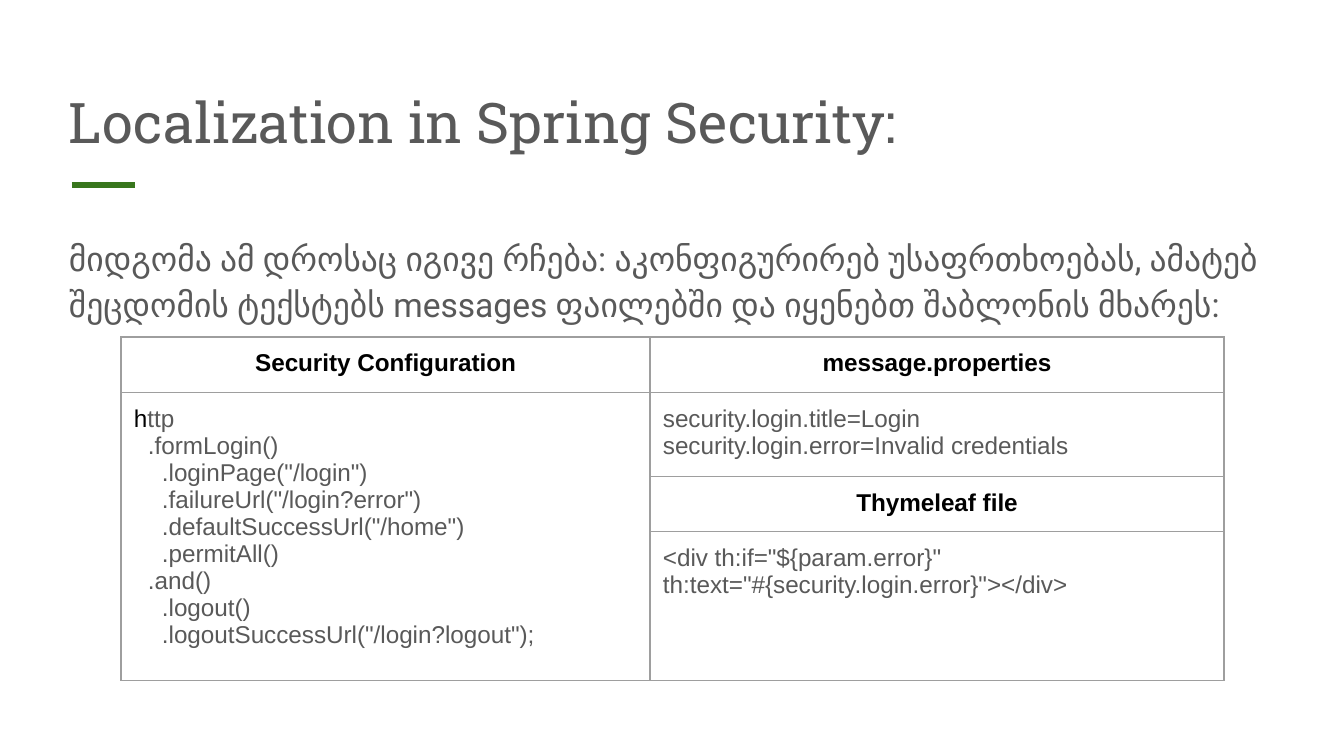
from dataclasses import dataclass

from lxml import etree
from pptx import Presentation
from pptx import util as u
from pptx.dml.color import RGBColor
from pptx.enum import shapes, text
from pptx.oxml import ns

GREY, BLACK, GREEN, RULE = "595959", "000000", "38761D", "9E9E9E"
PAD = 13
STEP = 7  # width of one code indent space


def px(n: int) -> int:
    return round(n * 914400 / 134.4)


def rgb(code: str) -> RGBColor:
    return RGBColor.from_string(code)


@dataclass
class Run:
    text: str
    size: int = 13
    font: str = "Arial"
    color: str = GREY
    bold: bool = False


@dataclass
class Line:
    runs: list[Run]
    indent: int = 0
    center: bool = False


@dataclass
class Block:
    row: int
    col: int
    lines: list[Line]


@dataclass
class Box:
    top: int
    height: int
    run: Run
    anchor: text.MSO_ANCHOR
    spacing: float = 1.0
    after: int = 0


def head(label: str) -> list[Line]:
    return [Line([Run(label, color=BLACK, bold=True)], center=True)]


def code(*rows: str) -> list[Line]:
    """Turn the leading spaces of each row into an indent."""
    return [Line([Run(r.lstrip())], len(r) - len(r.lstrip())) for r in rows]


def add_run(para, run: Run) -> None:
    part = para.add_run()
    part.text = run.text
    part.font.size = u.Pt(run.size)
    part.font.name = run.font
    part.font.bold = run.bold
    part.font.color.rgb = rgb(run.color)


def pad(item) -> None:
    item.margin_left = item.margin_right = px(PAD)
    item.margin_top = item.margin_bottom = px(PAD)


def add_box(slide, box: Box) -> None:
    shape = slide.shapes.add_textbox(px(56), px(box.top), px(1230), px(box.height))
    frame = shape.text_frame
    frame.word_wrap = True
    frame.vertical_anchor = box.anchor
    pad(frame)
    para = frame.paragraphs[0]
    para.line_spacing = box.spacing
    para.space_after = u.Pt(box.after)
    add_run(para, box.run)


def add_bar(slide) -> None:
    bar = slide.shapes.add_connector(
        shapes.MSO_CONNECTOR.STRAIGHT, px(72), px(185), px(135), px(185))
    bar.line.color.rgb = rgb(GREEN)
    bar.line.width = u.Pt(3)
    etree.SubElement(bar._element.spPr, ns.qn("a:effectLst"))


def edge(cell) -> None:
    """Draw a thin border on all four sides of a cell."""
    props = cell._tc.get_or_add_tcPr()
    for side in ("lnL", "lnR", "lnT", "lnB"):
        line = etree.SubElement(props, ns.qn(f"a:{side}"), w=str(u.Pt(0.75)))
        fill = etree.SubElement(line, ns.qn("a:solidFill"))
        etree.SubElement(fill, ns.qn("a:srgbClr"), val=RULE)


def fill_cell(cell, lines: list[Line]) -> None:
    frame = cell.text_frame
    for i, line in enumerate(lines):
        para = frame.add_paragraph() if i else frame.paragraphs[0]
        if line.center:
            para.alignment = text.PP_ALIGN.CENTER
        if line.indent:
            para._p.get_or_add_pPr().set("marL", str(px(line.indent * STEP)))
        for run in line.runs:
            add_run(para, run)


def add_grid(slide, cols: list[int], rows: list[int], blocks: list[Block]) -> None:
    frame = slide.shapes.add_table(
        len(rows), len(cols), px(121), px(337), px(sum(cols)), px(sum(rows)))
    grid = frame.table
    grid.first_row = grid.horz_banding = False
    for col, width in zip(grid.columns, cols):
        col.width = px(width)
    for row, height in zip(grid.rows, rows):
        row.height = px(height)
    for cell in grid.iter_cells():
        pad(cell)
        edge(cell)
        cell.fill.background()
    grid.cell(1, 0).merge(grid.cell(3, 0))
    for block in blocks:
        fill_cell(grid.cell(block.row, block.col), block.lines)


BOXES = [
    Box(219, 453, Run(
        "მიდგომა ამ დროსაც იგივე რჩება: აკონფიგურირებ უსაფრთხოებას, ამატებ "
        "შეცდომის ტექსტებს messages ფაილებში და იყენებთ შაბლონის მხარეს:",
        18, "Roboto"), text.MSO_ANCHOR.TOP, 1.15, 12),
    Box(67, 101, Run("Localization in Spring Security:", 30, "Roboto Slab"),
        text.MSO_ANCHOR.BOTTOM),
]

BLOCKS = [
    Block(0, 0, head("Security Configuration")),
    Block(0, 1, head("message.properties")),
    Block(1, 0, [Line([Run("h", color=BLACK), Run("ttp")])] + code(
        "  .formLogin()",
        '    .loginPage("/login")',
        '    .failureUrl("/login?error")',
        '    .defaultSuccessUrl("/home")',
        "    .permitAll()",
        "  .and()",
        "    .logout()",
        '    .logoutSuccessUrl("/login?logout");')),
    Block(1, 1, code("security.login.title=Login",
                     "security.login.error=Invalid credentials")),
    Block(2, 1, head("Thymeleaf file")),
    Block(3, 1, code('<div th:if="${param.error}" '
                     'th:text="#{security.login.error}"></div>')),
]


def main() -> None:
    deck = Presentation()
    deck.slide_width, deck.slide_height = px(1344), px(756)
    slide = deck.slides.add_slide(deck.slide_layouts[6])
    add_bar(slide)
    body, title = BOXES
    add_box(slide, body)
    add_grid(slide, [529, 574], [54, 81, 54, 136], BLOCKS)
    add_box(slide, title)
    deck.save("out.pptx")


if __name__ == "__main__":
    main()
